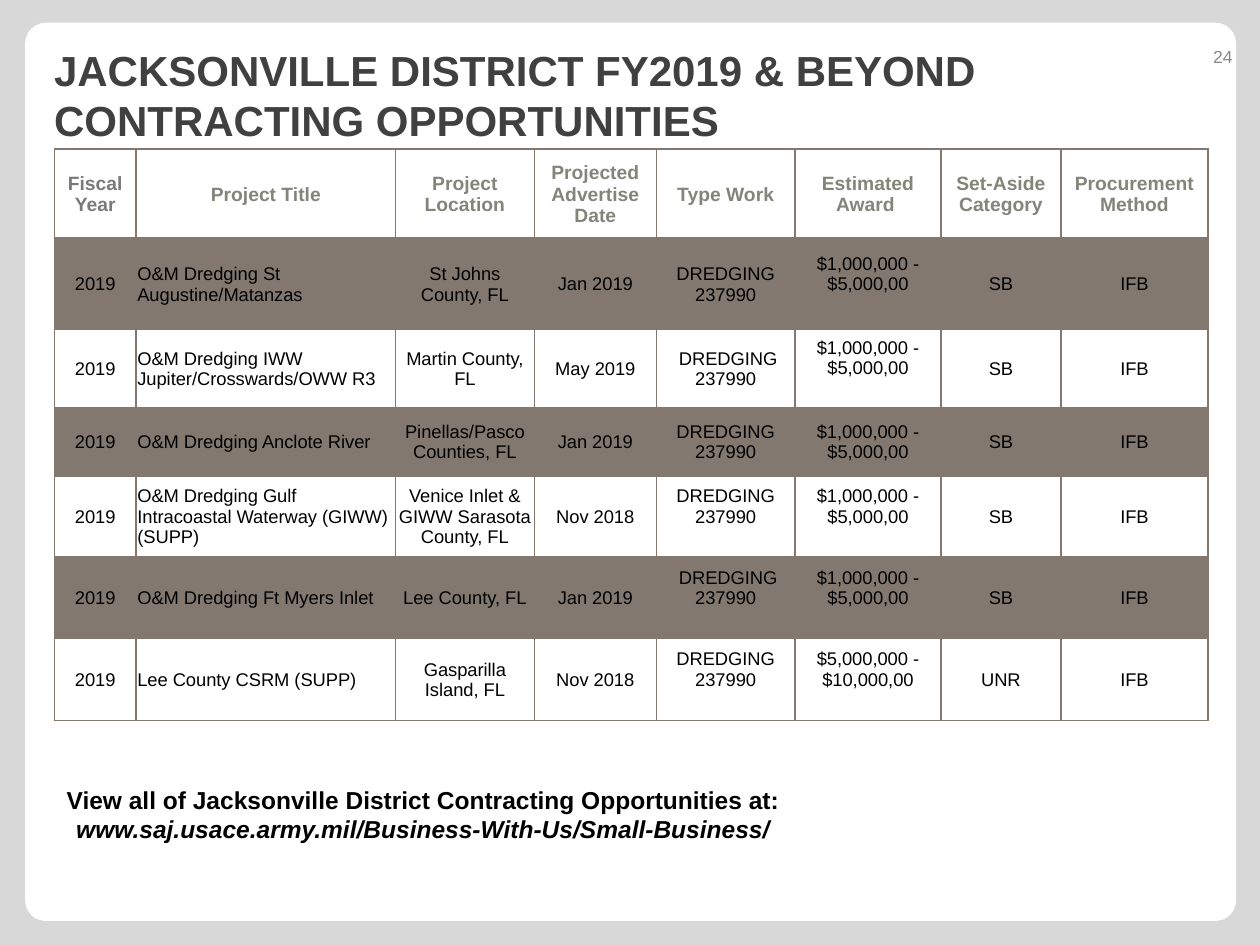
from lxml import etree
from pptx import Presentation
from pptx import util as u
from pptx.dml import color
from pptx.enum import shapes, text
from pptx.oxml import ns

Pt = u.Pt
FONT = "Arial"
BROWN = "82786F"
LEFT, MID, RIGHT = text.PP_ALIGN.LEFT, text.PP_ALIGN.CENTER, text.PP_ALIGN.RIGHT
TOP, MIDDLE = text.MSO_ANCHOR.TOP, text.MSO_ANCHOR.MIDDLE

COLS = [46.8, 148.3, 79.2, 69.8, 79.2, 83.5, 68.4, 84.2]
ROWS = [51.5, 51.4, 45.1, 38.9, 46.4, 46.7, 46.7]
HEADS = ["Fiscal Year", "Project Title", "Project Location", "Projected Advertise Date",
         "Type Work", "Estimated Award ", "Set-Aside Category", "Procurement Method"]
WORK = "DREDGING 237990"
LOW = "$1,000,000 - $5,000,00"
HIGH = "$5,000,000 - $10,000,00"
JOBS = [
    ("O&M Dredging St Augustine/Matanzas", "St Johns County, FL", "Jan 2019", WORK, LOW, "SB"),
    ("O&M Dredging IWW Jupiter/Crosswards/OWW R3", "Martin County, FL", "May 2019",
     " " + WORK, LOW, "SB"),
    ("O&M Dredging Anclote River", "Pinellas/Pasco Counties, FL", "Jan 2019", WORK, LOW, "SB"),
    ("O&M Dredging Gulf Intracoastal Waterway (GIWW) (SUPP)",
     "Venice Inlet & GIWW Sarasota County, FL", "Nov 2018", WORK, LOW, "SB"),
    ("O&M Dredging Ft Myers Inlet", "Lee County, FL", "Jan 2019", " " + WORK, LOW, "SB"),
    ("Lee County CSRM (SUPP)", "Gasparilla Island, FL", "Nov 2018", WORK, HIGH, "UNR"),
]
RAISED = {(1, 5), (2, 5), (4, 4), (4, 5), (5, 4), (5, 5), (6, 4), (6, 5)}


def rgb(code):
    return color.RGBColor.from_string(code)


def add_run(para, words, size, code, bold=False, slant=False):
    run = para.add_run()
    run.text = words
    font = run.font
    font.name, font.size, font.bold, font.italic = FONT, Pt(size), bold, slant
    font.color.rgb = rgb(code)


def add_text(slide, box, lines, align, anchor, size, code, bold=False):
    frame = slide.shapes.add_textbox(*map(Pt, box)).text_frame
    frame.word_wrap = True
    frame.vertical_anchor = anchor
    for i, (words, slant) in enumerate(lines):
        para = frame.add_paragraph() if i else frame.paragraphs[0]
        para.alignment = align
        add_run(para, words, size, code, bold, slant)


def add_panel(slide):
    box = map(Pt, (14.4, 13, 692, 513.3))
    panel = slide.shapes.add_shape(shapes.MSO_SHAPE.ROUNDED_RECTANGLE, *box)
    panel.adjustments[0] = 0.023
    panel.shadow.inherit = False
    panel.fill.solid()
    panel.fill.fore_color.rgb = rgb("FFFFFF")
    panel.line.fill.background()


def add_edge(props, side, width):
    line = etree.SubElement(props, ns.qn("a:ln" + side), w=str(Pt(width)))
    fill = etree.SubElement(line, ns.qn("a:solidFill"))
    etree.SubElement(fill, ns.qn("a:srgbClr"), val=BROWN)


def shade(cell, alpha):
    cell.fill.solid()
    cell.fill.fore_color.rgb = rgb(BROWN)
    tint = cell.fill._xPr.find(".//" + ns.qn("a:srgbClr"))
    etree.SubElement(tint, ns.qn("a:alpha"), val=str(alpha * 1000))


def fill_cell(cell, words, row, col):
    cell.margin_left = cell.margin_right = cell.margin_top = Pt(0.7)
    cell.margin_bottom = Pt(12 if (row, col) in RAISED else 0)
    cell.vertical_anchor = MIDDLE
    para = cell.text_frame.paragraphs[0]
    para.alignment = LEFT if row and col == 1 else MID
    if row:
        add_run(para, words, 10.5, "000000")
    else:
        add_run(para, words, 11, "83847A" if col else "7A7A7A", True)
    props = cell._tc.get_or_add_tcPr()
    for side in "LRTB":
        thick = (row, side) in {(0, "B"), (1, "T")}
        add_edge(props, side, 2 if thick else 1)
    if row % 2:
        shade(cell, 20)
    else:
        cell.fill.background()


def add_grid(slide):
    data = [HEADS] + [("2019", *job, "IFB") for job in JOBS]
    box = map(Pt, (31, 85, sum(COLS), sum(ROWS)))
    table = slide.shapes.add_table(len(ROWS), len(COLS), *box).table
    table.first_row = table.horz_banding = False
    for col, width in zip(table.columns, COLS):
        col.width = Pt(width)
    for r, (row, height) in enumerate(zip(table.rows, ROWS)):
        row.height = Pt(height)
        for c, words in enumerate(data[r]):
            fill_cell(table.cell(r, c), words, r, c)


def main():
    deck = Presentation()
    deck.slide_width, deck.slide_height = Pt(720), Pt(540)
    slide = deck.slides.add_slide(deck.slide_layouts[6])
    back = slide.background.fill
    back.solid()
    back.fore_color.rgb = rgb("D8D8D8")
    add_panel(slide)
    title = "JACKSONVILLE DISTRICT FY2019 & BEYOND CONTRACTING OPPORTUNITIES"
    add_text(slide, (23.8, 22.5, 660, 63.4), [(title, False)], LEFT, MIDDLE, 24, "404040", True)
    add_text(slide, (653.8, 18, 57.6, 28.8), [("24", False)], RIGHT, MIDDLE, 10, "898989")
    add_grid(slide)
    lines = [("View all of Jacksonville District Contracting Opportunities at:", False),
             ("www.saj.usace.army.mil/Business-With-Us/Small-Business/", True)]
    add_text(slide, (-18.7, 445, 521.3, 41), lines, MID, TOP, 14, "000000", True)
    deck.save("out.pptx")


if __name__ == "__main__":
    main()
